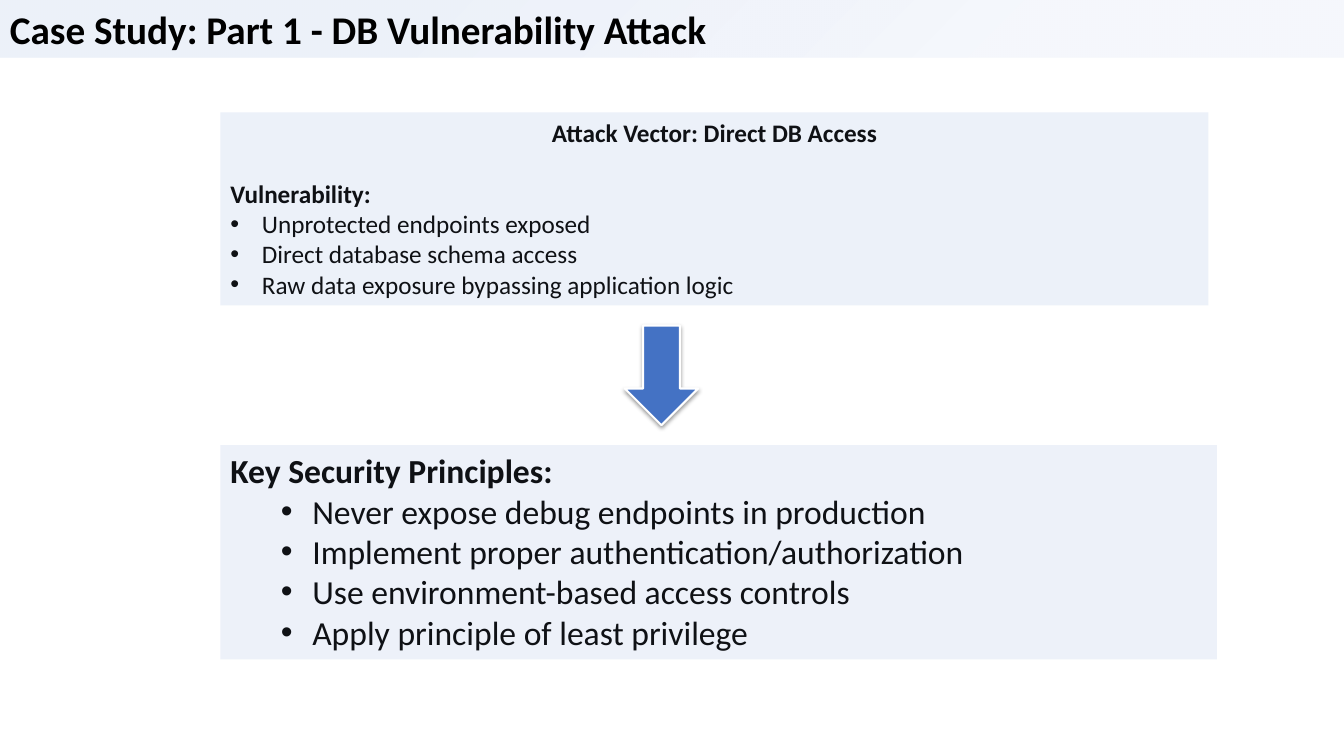
from lxml import etree
from pptx import Presentation
from pptx.dml.color import RGBColor
from pptx.enum.shapes import MSO_SHAPE as Shape
from pptx.enum.text import PP_ALIGN as Align
from pptx.oxml import parse_xml
from pptx.oxml.ns import nsdecls, qn
from pptx.util import Pt

PX = 9525
COLORS = {
    "accent": "4472C4",
    "attack": "ECF1F9",
    "principles": "EDF1F9",
    "ink": "0F1115",
    "black": "000000",
    "white": "FFFFFF",
}


def color(name):
    return RGBColor.from_string(COLORS[name])


def add_text(box, text, size=18, ink="ink", bold=False, align=Align.LEFT,
             before=0, bullet_left=0):
    """Add one paragraph to box; bullet_left is its text indent in px."""
    frame = box.text_frame
    para = frame.add_paragraph() if frame.text else frame.paragraphs[0]
    if bullet_left:
        props = para._p.get_or_add_pPr()
        props.set("marL", str(bullet_left * PX))
        props.set("indent", str(-30 * PX))
        etree.SubElement(props, qn("a:buFont")).set("typeface", "Arial")
        etree.SubElement(props, qn("a:buChar")).set("char", "•")
    para.alignment = align
    para.space_before = Pt(before)
    span = para.add_run()
    span.text = text
    span.font.name = "Calibri"
    span.font.size = Pt(size)
    span.font.bold = bold
    span.font.color.rgb = color(ink)


deck = Presentation()
deck.slide_width, deck.slide_height = 1280 * PX, 720 * PX
page = deck.slides.add_slide(deck.slide_layouts[6])

boxes = {}
for name, left, top, width, height in [
    ("title", 0, 0, 1280, 55),
    ("principles", 210, 424, 949, 204),
    ("attack", 210, 107, 941, 184),
]:
    box = page.shapes.add_textbox(left * PX, top * PX, width * PX, height * PX)
    box.text_frame.word_wrap = True
    if name in COLORS:
        box.fill.solid()
        box.fill.fore_color.rgb = color(name)
    boxes[name] = box

# Title bar: a pale tint fading out from the top left corner
title = boxes["title"]
stops = "".join(
    f'<a:gs pos="{place}000"><a:srgbClr val="{COLORS["accent"]}">'
    f'<a:alpha val="{alpha}000"/></a:srgbClr></a:gs>'
    for place, alpha in [(26, 10), (76, 5)]
)
title.fill.background()
no_fill = title._element.spPr.find(qn("a:noFill"))
no_fill.getparent().replace(no_fill, parse_xml(
    f'<a:gradFill {nsdecls("a")}><a:gsLst>{stops}</a:gsLst>'
    '<a:path path="circle"><a:fillToRect r="100000" b="100000"/></a:path>'
    '</a:gradFill>'
))
add_text(title, "Case Study: Part 1 - DB Vulnerability Attack",
         size=28, ink="black", bold=True)

principles = boxes["principles"]
add_text(principles, "Key Security Principles:", size=24, bold=True)
for principle in [
    "Never expose debug endpoints in production",
    "Implement proper authentication/authorization",
    "Use environment-based access controls",
    "Apply principle of least privilege",
]:
    add_text(principles, principle, size=24, bullet_left=78)

attack = boxes["attack"]
add_text(attack, "Attack Vector: Direct DB Access", bold=True, align=Align.CENTER)
add_text(attack, "Vulnerability:", bold=True, before=22)
for weakness in [
    "Unprotected endpoints exposed",
    "Direct database schema access",
    "Raw data exposure bypassing application logic",
]:
    add_text(attack, weakness, bullet_left=30)

arrow = page.shapes.add_shape(Shape.DOWN_ARROW, 595 * PX, 310 * PX, 70 * PX, 95 * PX)
arrow.fill.solid()
arrow.fill.fore_color.rgb = color("accent")
arrow.line.color.rgb = color("white")
arrow.line.width = Pt(1.5)
arrow.shadow.inherit = False
effects = arrow._element.spPr.find(qn("a:effectLst"))
effects.append(parse_xml(
    f'<a:outerShdw {nsdecls("a")} blurRad="{Pt(3.1)}" dist="{Pt(1.6)}" '
    f'dir="5400000" rotWithShape="0"><a:srgbClr val="{COLORS["black"]}">'
    '<a:alpha val="38000"/></a:srgbClr></a:outerShdw>'
))

deck.save("out.pptx")
